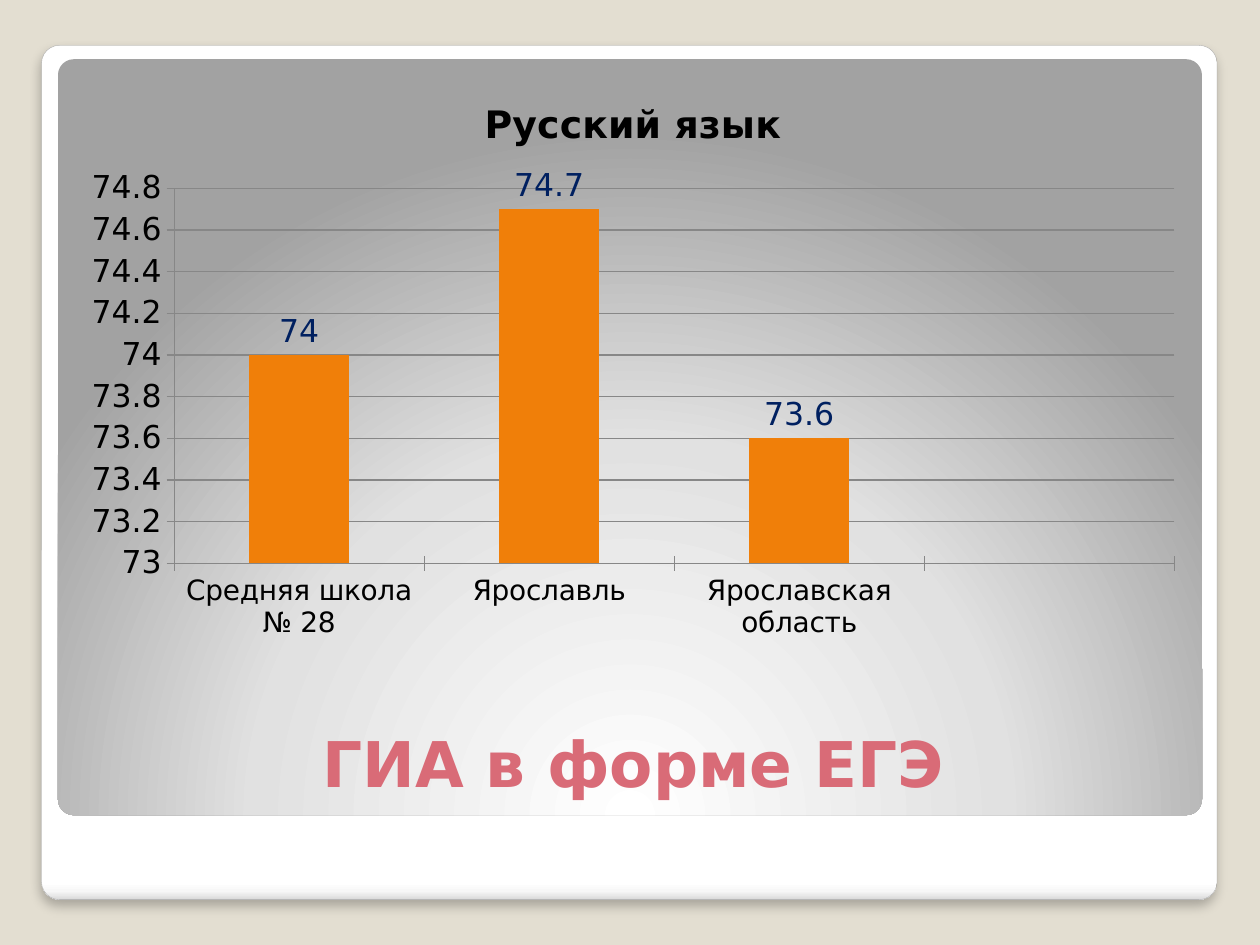
from dataclasses import dataclass

from pptx import Presentation, oxml
from pptx import util as u
from pptx.chart import data as chart_data
from pptx.dml.color import RGBColor
from pptx.enum import chart as chart_enum, shapes, text
from pptx.oxml import ns

FONT = "DejaVu Sans"
BACKGROUND = RGBColor(0xE3, 0xDE, 0xD1)
EDGE = RGBColor(0xA4, 0xA4, 0xA4)
AXIS = RGBColor(0x87, 0x87, 0x87)
BLACK = RGBColor(0x00, 0x00, 0x00)
ROSE = RGBColor(0xD9, 0x6B, 0x77)
ORANGE = RGBColor(0xF0, 0x7F, 0x09)
NAVY = RGBColor(0x00, 0x20, 0x60)

LINEAR = '<a:lin ang="5400000" scaled="0"/>'
CIRCLE = ('<a:path path="circle"><a:fillToRect l="50000" t="175000" '
          'r="50000" b="-75000"/></a:path>')
SHADOW = ('<a:outerShdw blurRad="76200" dist="50800" dir="5400000" algn="tl" '
          'rotWithShape="0"><a:srgbClr val="000000"><a:alpha val="25000"/>'
          '</a:srgbClr></a:outerShdw>')


@dataclass
class Card:
    """A rounded panel; lengths in points, stops as (percent, colour)."""
    left: float
    top: float
    width: float
    height: float
    stops: list[tuple[int, str]]
    direction: str
    outlined: bool = False


CARDS = [
    Card(23.76, 25.92, 671.76, 488.16,
         [(0, "FFFFFF"), (98, "FFFFFF"), (99, "F7F7F7"), (100, "DADADA")],
         LINEAR, outlined=True),
    Card(33.12, 33.84, 653.76, 432,
         [(0, "FFFFFF"), (55, "E1E1E1"), (100, "A2A2A2")], CIRCLE),
]


def draw_card(slide, card: Card) -> None:
    shape = slide.shapes.add_shape(
        shapes.MSO_SHAPE.ROUNDED_RECTANGLE, u.Pt(card.left), u.Pt(card.top),
        u.Pt(card.width), u.Pt(card.height))
    shape.adjustments[0] = 0.021
    shape.shadow.inherit = False
    shape.fill.solid()
    properties = shape._element.spPr
    stops = "".join(
        f'<a:gs pos="{position * 1000}"><a:srgbClr val="{color}"/></a:gs>'
        for position, color in card.stops)
    gradient = oxml.parse_xml(
        f'<a:gradFill {ns.nsdecls("a")} rotWithShape="1">'
        f'<a:gsLst>{stops}</a:gsLst>{card.direction}</a:gradFill>')
    properties.replace(properties.find(ns.qn("a:solidFill")), gradient)
    if card.outlined:
        shape.line.color.rgb = EDGE
        shape.line.width = u.Pt(0.16)
        effects = oxml.parse_xml(
            f'<a:effectLst {ns.nsdecls("a")}>{SHADOW}</a:effectLst>')
        properties.replace(properties.find(ns.qn("a:effectLst")), effects)
    else:
        shape.line.fill.background()


def format_font(font, size: float, color: RGBColor, bold: bool = False) -> None:
    font.name = FONT
    font.size = u.Pt(size)
    font.color.rgb = color
    font.bold = bold


def write_text(frame, words: str, *, size: float, color: RGBColor,
               bold: bool = False) -> None:
    paragraph = frame.paragraphs[0]
    paragraph.alignment = text.PP_ALIGN.CENTER
    run = paragraph.add_run()
    run.text = words
    format_font(run.font, size, color, bold)


def draw_title(slide) -> None:
    title = slide.shapes.title
    title.left, title.top = u.Pt(39.6), u.Pt(376.56)
    title.width, title.height = u.Pt(644.4), u.Pt(84.24)
    # Lift the placeholder above the cards
    slide.shapes._spTree.append(title._element)
    frame = title.text_frame
    frame.vertical_anchor = text.MSO_ANCHOR.BOTTOM
    frame.word_wrap = True
    write_text(frame, "ГИА в форме ЕГЭ", size=36, color=ROSE, bold=True)


def draw_chart(slide) -> None:
    scores = chart_data.CategoryChartData()
    scores.categories = ["Средняя школа № 28", "Ярославль",
                         "Ярославская область", ""]
    scores.add_series("Series 1", (74, 74.7, 73.6, None))
    chart = slide.shapes.add_chart(
        chart_enum.XL_CHART_TYPE.COLUMN_CLUSTERED, u.Pt(39.6), u.Pt(41.76),
        u.Pt(644.4), u.Pt(329.76), scores).chart
    format_font(chart.font, 18, BLACK)
    chart.has_legend = False
    chart.has_title = True
    write_text(chart.chart_title.text_frame, "Русский язык",
               size=21.6, color=BLACK, bold=True)
    chart.chart_title.include_in_layout = False

    # Axes
    for axis, size in ((chart.category_axis, 16), (chart.value_axis, 18)):
        axis.major_tick_mark = chart_enum.XL_TICK_MARK.CROSS
        axis.minor_tick_mark = chart_enum.XL_TICK_MARK.NONE
        axis.format.line.color.rgb = AXIS
        format_font(axis.tick_labels.font, size, BLACK)
    value_axis = chart.value_axis
    value_axis.minimum_scale, value_axis.maximum_scale = 73, 74.8
    value_axis.major_unit = 0.2
    value_axis.has_major_gridlines = True
    value_axis.major_gridlines.format.line.color.rgb = AXIS

    # Columns and their values
    plot = chart.plots[0]
    plot.gap_width = 150
    plot.vary_by_categories = False
    series = plot.series[0]
    series.format.fill.solid()
    series.format.fill.fore_color.rgb = ORANGE
    labels = series.data_labels
    labels.show_value = True
    labels.position = chart_enum.XL_LABEL_POSITION.OUTSIDE_END
    format_font(labels.font, 18, NAVY)

    # Fixed inner plot area, as fractions of the chart
    area = chart._chartSpace.chart.plotArea
    for layout in area.findall(ns.qn("c:layout")):
        area.remove(layout)
    places = "".join(f'<c:{key} val="{value}"/>' for key, value in (
        ("layoutTarget", "inner"), ("xMode", "edge"), ("yMode", "edge"),
        ("x", 0.093), ("y", 0.2), ("w", 0.887), ("h", 0.65)))
    area.insert(0, oxml.parse_xml(
        f'<c:layout {ns.nsdecls("c")}><c:manualLayout>{places}'
        '</c:manualLayout></c:layout>'))


def main() -> None:
    presentation = Presentation()
    presentation.slide_width, presentation.slide_height = u.Pt(720), u.Pt(540)
    slide = presentation.slides.add_slide(presentation.slide_layouts[5])
    slide.background.fill.solid()
    slide.background.fill.fore_color.rgb = BACKGROUND
    for card in CARDS:
        draw_card(slide, card)
    draw_title(slide)
    draw_chart(slide)
    presentation.save("out.pptx")


if __name__ == "__main__":
    main()
